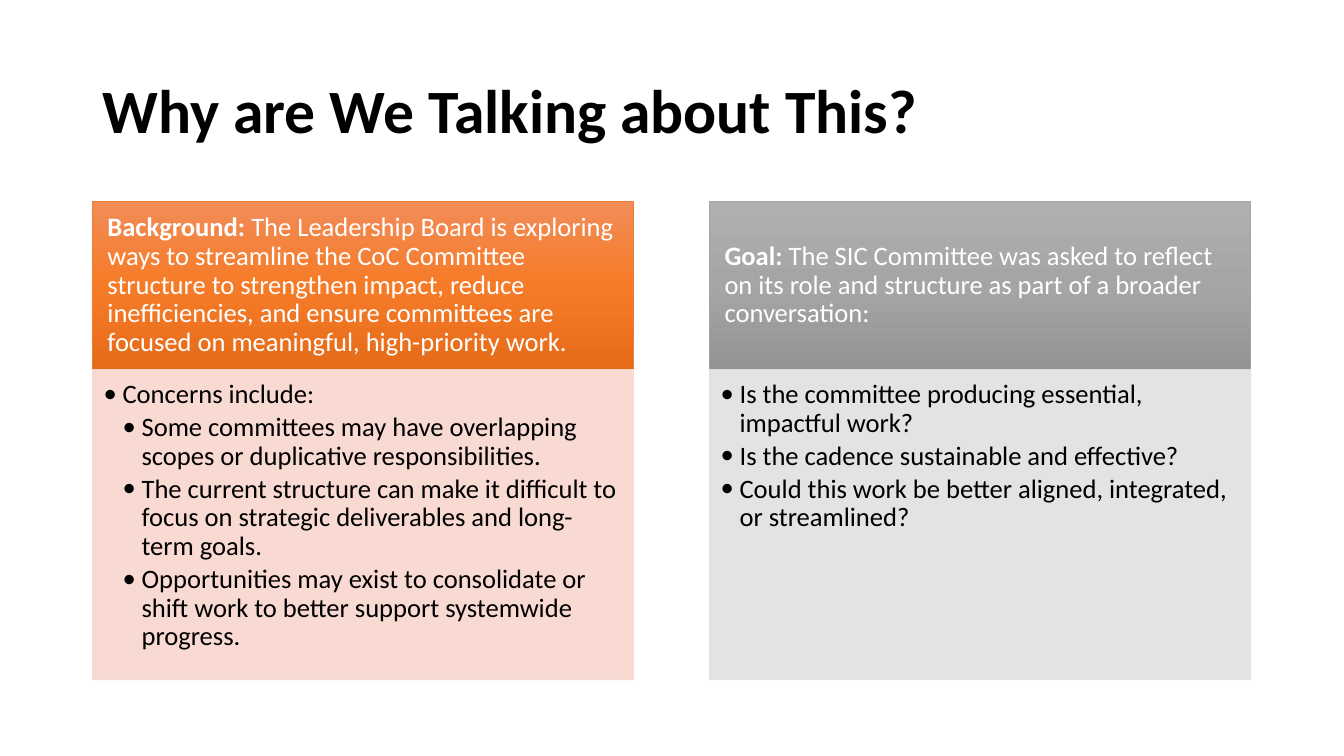
from copy import deepcopy

from lxml import etree
from pptx import Presentation
from pptx.dml.color import RGBColor
from pptx.enum.shapes import MSO_SHAPE
from pptx.enum.text import MSO_ANCHOR, PP_ALIGN
from pptx.oxml.ns import qn
from pptx.util import Cm, Pt

RECT = MSO_SHAPE.RECTANGLE
TOP, MIDDLE = MSO_ANCHOR.TOP, MSO_ANCHOR.MIDDLE
LEFT = PP_ALIGN.LEFT

COLORS = {
    "black": "000000",
    "white": "FFFFFF",
    "orange": "ED7D31",
    "orange_light": "F18C57",
    "orange_mid": "F67B28",
    "orange_dark": "E56C19",
    "peach": "F8D7CE",
    "gray": "A5A5A5",
    "gray_light": "AFAFAF",
    "gray_dark": "939393",
    "gray_pale": "E1E1E1",
}

MARGIN, COL_W, COL_STEP = 2.33, 13.64, 15.55
HEAD_TOP, HEAD_H, BODY_H = 5.08, 4.23, 7.82

COLUMNS = [
    {
        "label": "Background: ",
        "text": "The Leadership Board is exploring ways to streamline the CoC Committee "
                "structure to strengthen impact, reduce inefficiencies, and ensure "
                "committees are focused on meaningful, high-priority work.",
        "gradient": ("orange_light", "orange_mid", "orange_dark"),
        "line": "orange",
        "body": "peach",
        "bullets": [
            (1, "Concerns include:"),
            (2, "Some committees may have overlapping scopes or duplicative responsibilities."),
            (2, "The current structure can make it difficult to focus on strategic "
                "deliverables and long-term goals."),
            (2, "Opportunities may exist to consolidate or shift work to better support "
                "systemwide progress."),
        ],
    },
    {
        "label": "Goal: ",
        "text": "The SIC Committee was asked to reflect on its role and structure as part "
                "of a broader conversation:",
        "gradient": ("gray_light", "gray", "gray_dark"),
        "line": "gray",
        "body": "gray_pale",
        "bullets": [
            (1, "Is the committee producing essential, impactful work?"),
            (1, "Is the cadence sustainable and effective?"),
            (1, "Could this work be better aligned, integrated, or streamlined?"),
        ],
    },
]


class Deck:
    """Draws styled elements on the current slide."""

    font = "Calibri"
    size = 19
    indent = 0.48

    def __init__(self, slide):
        self.s = slide

    def rgb(self, name):
        return RGBColor.from_string(COLORS[name])

    def frame(self, sp, anchor, insets):
        tf = sp.text_frame
        tf.word_wrap = True
        tf.vertical_anchor = anchor
        tf.margin_left, tf.margin_top, tf.margin_right, tf.margin_bottom = map(Cm, insets)
        return tf

    def style(self, p, color, size, bold=False):
        p.alignment = LEFT
        p.line_spacing = 0.9
        for r in p.runs:
            r.font.name = self.font
            r.font.size = Pt(size)
            r.font.bold = bold
            r.font.color.rgb = self.rgb(color)

    def title(self, text, x, y, w, h):
        sp = self.s.shapes.add_textbox(Cm(x), Cm(y), Cm(w), Cm(h))
        tf = self.frame(sp, MIDDLE, (0.25, 0.13, 0.25, 0.13))
        tf.text = text
        self.style(tf.paragraphs[0], "black", 44, True)

    def box(self, x, y, w, h, line):
        sp = self.s.shapes.add_shape(RECT, Cm(x), Cm(y), Cm(w), Cm(h))
        sp.shadow.inherit = False
        sp.line.color.rgb = self.rgb(line)
        sp.line.width = Pt(0.5)
        return sp

    def gradient(self, sp, names):
        fill = sp.fill
        fill.gradient()
        fill.gradient_angle = 270
        first = sp._element.spPr.find(".//" + qn("a:gs"))
        first.addnext(deepcopy(first))
        for i, (stop, name) in enumerate(zip(fill.gradient_stops, names)):
            stop.position = i / 2
            stop.color.rgb = self.rgb(name)

    def header(self, x, y, w, h, label, text, gradient, line):
        sp = self.box(x, y, w, h, line)
        self.gradient(sp, gradient)
        p = self.frame(sp, MIDDLE, (0.38, 0.2, 0.38, 0.2)).paragraphs[0]
        for part in (label, text):
            p.add_run().text = part
        self.style(p, "white", self.size)
        p.runs[0].font.bold = True

    def bullet_list(self, x, y, w, h, bullets, color):
        sp = self.box(x, y, w, h, color)
        sp.fill.solid()
        sp.fill.fore_color.rgb = self.rgb(color)
        for clr in sp._element.spPr.iter(qn("a:srgbClr")):
            etree.SubElement(clr, qn("a:alpha"), val="90000")
        tf = self.frame(sp, TOP, (0.28, 0.28, 0.38, 0.43))
        tf.text = "\n".join(text for _, text in bullets)
        for p, (level, _) in zip(tf.paragraphs, bullets):
            p.level = level
            pPr = p._p.get_or_add_pPr()
            pPr.set("marL", str(Cm(self.indent * level)))
            pPr.set("indent", str(-Cm(self.indent)))
            etree.SubElement(pPr, qn("a:buFont"), typeface=self.font)
            etree.SubElement(pPr, qn("a:buChar"), char="•")
            p.space_after = Pt(3)
            self.style(p, "black", self.size)


def main():
    prs = Presentation()
    prs.slide_width, prs.slide_height = Cm(33.87), Cm(19.05)
    deck = Deck(prs.slides.add_slide(prs.slide_layouts[6]))
    deck.title("Why are We Talking about This?", MARGIN, 1.01, 29.21, 3.68)
    for i, col in enumerate(COLUMNS):
        x = MARGIN + i * COL_STEP
        deck.header(x, HEAD_TOP, COL_W, HEAD_H,
                    col["label"], col["text"], col["gradient"], col["line"])
        deck.bullet_list(x, HEAD_TOP + HEAD_H, COL_W, BODY_H, col["bullets"], col["body"])
    prs.save("out.pptx")


if __name__ == "__main__":
    main()
